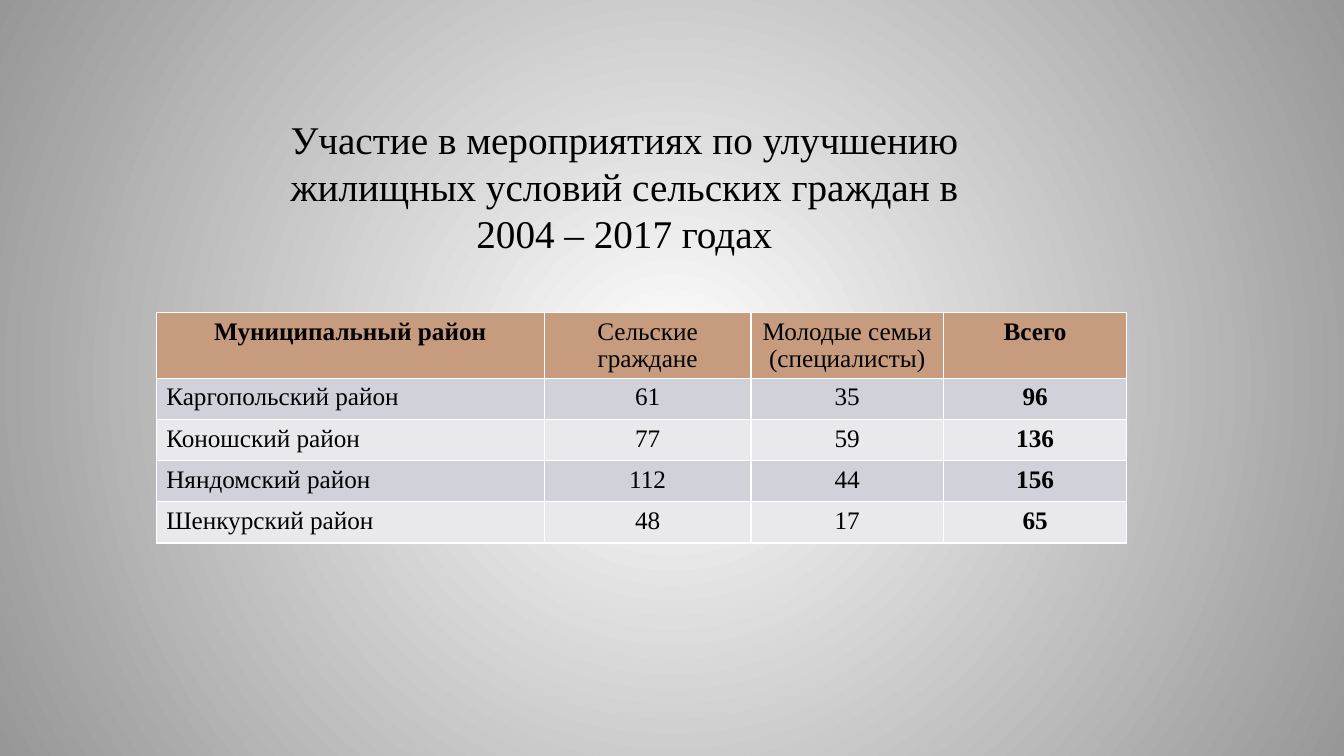
from pptx import Presentation
from pptx.dml.color import RGBColor
from pptx.enum.text import MSO_ANCHOR, MSO_AUTO_SIZE, PP_ALIGN
from pptx.oxml import parse_xml
from pptx.oxml.ns import nsdecls, qn
from pptx.util import Pt

FONT = "Times New Roman"
HEAD = ["Муниципальный район", "Сельские граждане", "Молодые семьи (специалисты)", "Всего"]
DATA = [
    ("Каргопольский район", 61, 35),
    ("Коношский район", 77, 59),
    ("Няндомский район", 112, 44),
    ("Шенкурский район", 48, 17),
]
WIDTHS = [277.2, 147.6, 137.5, 131]
BANDS = ["D1D1DA", "E9E9ED"]


def tint(code):
    return RGBColor.from_string(code)


def style(frame, text, size, align, bold=False):
    frame.text = text
    para = frame.paragraphs[0]
    para.alignment = align
    font = para.runs[0].font
    font.name = FONT
    font.size = Pt(size)
    font.bold = bold
    font.color.rgb = tint("000000")


def backdrop(slide):
    fill = slide.background.fill
    fill.gradient()
    for stop, code in zip(fill.gradient_stops, ["FFFFFF", "979797"]):
        stop.color.rgb = tint(code)
    grad = slide.element.find(".//" + qn("a:gradFill"))
    grad.replace(grad.find(qn("a:lin")), parse_xml(
        f'<a:path {nsdecls("a")} path="circle">'
        '<a:fillToRect l="50000" t="50000" r="50000" b="50000"/></a:path>'))


def heading(slide, left, top, width, height):
    title = slide.shapes.title
    title.left, title.top = Pt(left), Pt(top)
    title.width, title.height = Pt(width), Pt(height)
    frame = title.text_frame
    frame.word_wrap = True
    frame.auto_size = MSO_AUTO_SIZE.NONE
    frame.vertical_anchor = MSO_ANCHOR.MIDDLE
    style(frame, "Участие в мероприятиях по улучшению жилищных условий "
          "сельских граждан в 2004 – 2017 годах", 28, PP_ALIGN.CENTER)


def districts(slide, left, top, width, height):
    rows = [HEAD] + [(name, rural, young, rural + young) for name, rural, young in DATA]
    grid = slide.shapes.add_table(
        len(rows), len(HEAD), Pt(left), Pt(top), Pt(width), Pt(height)).table
    for col, size in zip(grid.columns, WIDTHS):
        col.width = Pt(size)
    first = 47
    for y, row in enumerate(rows):
        grid.rows[y].height = Pt(first if y == 0 else (height - first) / len(DATA))
        for x, value in enumerate(row):
            cell = grid.cell(y, x)
            cell.fill.solid()
            cell.fill.fore_color.rgb = tint(BANDS[(y - 1) % 2] if y else "C69B7E")
            align = PP_ALIGN.LEFT if y and x == 0 else PP_ALIGN.CENTER
            bold = x == len(HEAD) - 1 or x == y == 0
            style(cell.text_frame, str(value), 18, align, bold)


def main():
    deck = Presentation()
    deck.slide_width, deck.slide_height = Pt(960), Pt(540)
    slide = deck.slides.add_slide(deck.slide_layouts[5])
    backdrop(slide)
    heading(slide, 195.8, 87.8, 500.4, 90)
    districts(slide, 111.6, 223.2, sum(WIDTHS), 164.6)
    deck.save("out.pptx")


if __name__ == "__main__":
    main()
